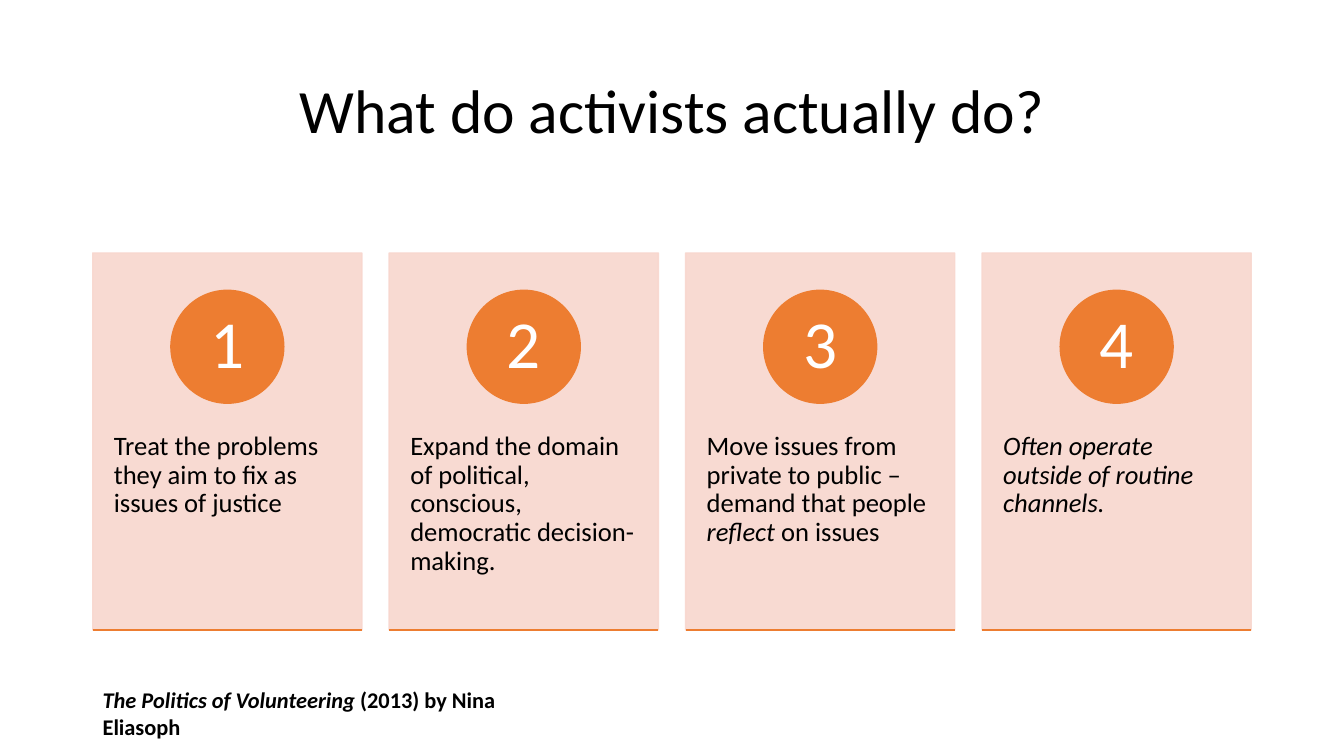
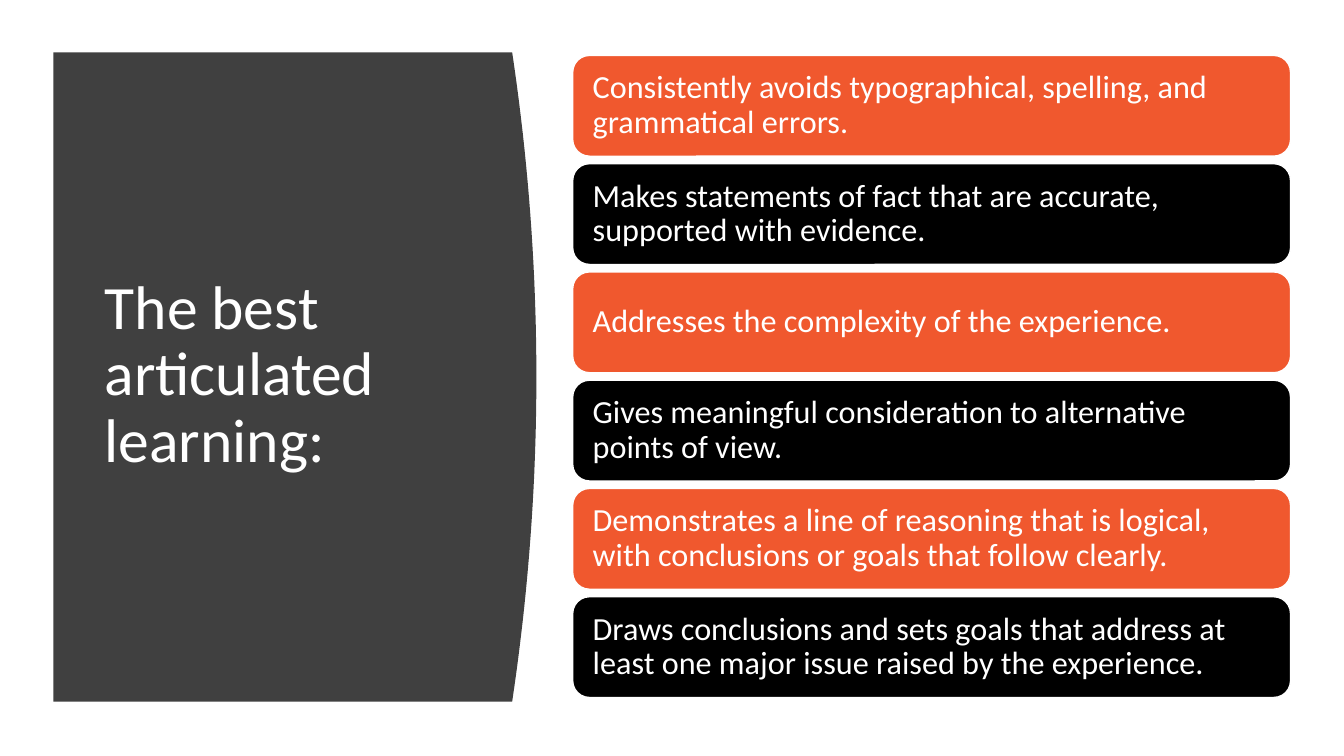
from dataclasses import dataclass

from lxml import etree
from pptx import Presentation
from pptx.dml.color import RGBColor
from pptx.enum.shapes import MSO_CONNECTOR, MSO_SHAPE
from pptx.enum.text import MSO_ANCHOR, PP_ALIGN
from pptx.oxml.ns import qn
from pptx.util import Inches, Pt

RECT, ROUND, OVAL = MSO_SHAPE.RECTANGLE, MSO_SHAPE.ROUNDED_RECTANGLE, MSO_SHAPE.OVAL
STRAIGHT = MSO_CONNECTOR.STRAIGHT
LEFT, CENTER = PP_ALIGN.LEFT, PP_ALIGN.CENTER
TOP, MIDDLE = MSO_ANCHOR.TOP, MSO_ANCHOR.MIDDLE
ITALIC = {"italic": True}
PADDING = (0.1, 0.05, 0.1, 0.05)


@dataclass(frozen=True)
class Theme:
    font: str = "Calibri"
    ink: str = "000000"
    paper: str = "FFFFFF"
    accent: str = "ED7D31"
    card: str = "F8D7CE"
    panel: str = "404040"
    bars: tuple = ("F0582E", "000000")
    title_size: int = 44
    number_size: int = 48
    bar_size: int = 23
    card_size: int = 19
    source_size: int = 16
    line_width: int = 1


def set_alpha(color_parent, percent):
    """Make every solid colour below an element partly transparent."""
    for color in color_parent.iter(qn("a:srgbClr")):
        etree.SubElement(color, qn("a:alpha")).set("val", str(percent * 1000))


class Deck:
    def __init__(self, theme):
        self.theme = theme
        self.prs = Presentation()
        self.prs.slide_width, self.prs.slide_height = Inches(13.33), Inches(7.5)
        self.s = None

    def new_slide(self):
        self.s = self.prs.slides.add_slide(self.prs.slide_layouts[6])

    def add_runs(self, sp, runs, size, color, align=LEFT, anchor=MIDDLE,
                 insets=PADDING, spacing=0.9, bold=False):
        """Fill a shape with one paragraph of (text, format) runs."""
        tf = sp.text_frame
        tf.word_wrap, tf.vertical_anchor = True, anchor
        for side, inset in zip(("left", "top", "right", "bottom"), insets):
            setattr(tf, f"margin_{side}", Inches(inset))
        p = tf.paragraphs[0]
        p.alignment, p.line_spacing = align, spacing
        for text, extra in runs:
            r = p.add_run()
            r.text = text
            r.font.color.rgb = RGBColor.from_string(color)
            style = {"name": self.theme.font, "size": Pt(size), "bold": bold, **extra}
            for name, value in style.items():
                setattr(r.font, name, value)

    def text(self, box, runs, size, color, **layout):
        sp = self.s.shapes.add_textbox(*map(Inches, box))
        self.add_runs(sp, runs, size, color, **layout)

    def title(self, box, text, color, align=LEFT):
        self.text(box, [(text, {})], self.theme.title_size, color, align=align)

    def paint(self, sp, fill, line=None):
        sp.shadow.inherit = False
        sp.fill.solid()
        sp.fill.fore_color.rgb = RGBColor.from_string(fill)
        if line:
            sp.line.color.rgb = RGBColor.from_string(line)
            sp.line.width = Pt(self.theme.line_width)
        else:
            sp.line.fill.background()

    def shape(self, kind, box, fill, line):
        sp = self.s.shapes.add_shape(kind, *map(Inches, box))
        self.paint(sp, fill, line)
        return sp

    def rule(self, x, y, width, color):
        line = self.s.shapes.add_connector(
            STRAIGHT, Inches(x), Inches(y), Inches(x + width), Inches(y))
        line.line.color.rgb = RGBColor.from_string(color)
        line.line.width = Pt(self.theme.line_width)
        etree.SubElement(line._element.spPr, qn("a:effectLst"))

    def card(self, x, y, width, height, number, runs):
        t = self.theme
        sp = self.shape(RECT, (x, y, width, height), t.card, t.card)
        set_alpha(sp._element.spPr, 90)
        self.add_runs(sp, runs, t.card_size, t.ink, anchor=TOP,
                      insets=(0.21, 1.78, 0.21, 0.36))
        size = 1.12
        circle = self.shape(OVAL, (x + (width - size) / 2, y + 0.37, size, size),
                            t.accent, t.accent)
        self.add_runs(circle, [(str(number), {})], t.number_size, t.paper,
                      align=CENTER, insets=(0.09, 0.01, 0.09, 0.01))
        self.rule(x, y + height, width, t.accent)

    def bar(self, box, text, fill):
        sp = self.shape(ROUND, box, fill, self.theme.paper)
        self.add_runs(sp, [(text, {})], self.theme.bar_size, self.theme.paper,
                      insets=(0.15, 0.15, 0.15, 0.15))

    def curved_panel(self, x, y, width, height, bulge, steps=40):
        """Draw a panel whose right side bows outwards as a parabola."""
        edge = []
        for i in range(steps + 1):
            t = 2 * i / steps - 1
            edge.append((x + width - bulge * t * t, y + height * i / steps))
        points = [(Inches(px), Inches(py)) for px, py in edge + [(x, y + height)]]
        outline = self.s.shapes.build_freeform(Inches(x), Inches(y))
        outline.add_line_segments(points, close=True)
        self.paint(outline.convert_to_shape(), self.theme.panel)


def activists_slide(deck):
    t = deck.theme
    left, width, gap = 0.92, 2.67, 0.27
    cards = [
        [("Treat the problems they aim to fix as issues of justice", {})],
        [("Expand the domain of political, conscious, democratic decision-making.", {})],
        [("Move issues from private to public – demand that people ", {}),
         ("reflect ", ITALIC), ("on issues", {})],
        [("Often operate outside of routine channels.", ITALIC)],
    ]
    deck.new_slide()
    deck.title((left, 0.4, 11.5, 1.45), "What do activists actually do?", t.ink, CENTER)
    for i, runs in enumerate(cards):
        deck.card(left + i * (width + gap), 2.51, width, 3.74, i + 1, runs)
    source = [("The Politics of Volunteering ", ITALIC), ("(2013) by Nina Eliasoph", {})]
    deck.text((left, 6.76, 4.27, 0.64), source, t.source_size, t.ink,
              anchor=TOP, spacing=1.0, bold=True)


def learning_slide(deck):
    t = deck.theme
    criteria = [
        "Consistently avoids typographical, spelling, and grammatical errors.",
        "Makes statements of fact that are accurate, supported with evidence.",
        "Addresses the complexity of the experience.",
        "Gives meaningful consideration to alternative points of view.",
        "Demonstrates a line of reasoning that is logical, with conclusions or goals "
        "that follow clearly.",
        "Draws conclusions and sets goals that address at least one major issue raised "
        "by the experience.",
    ]
    top, bottom, height = 0.55, 6.92, 1
    pitch = (bottom - top - height) / (len(criteria) - 1)
    deck.new_slide()
    deck.curved_panel(0.53, 0.52, 4.79, 6.44, bulge=0.24)
    deck.title((0.94, 1.11, 3.74, 5.24), "The best articulated learning:", t.paper)
    for i, text in enumerate(criteria):
        deck.bar((5.68, top + i * pitch, 7.12, height), text, t.bars[i % len(t.bars)])


def main():
    deck = Deck(Theme())
    activists_slide(deck)
    learning_slide(deck)
    deck.prs.save("out.pptx")


if __name__ == "__main__":
    main()
